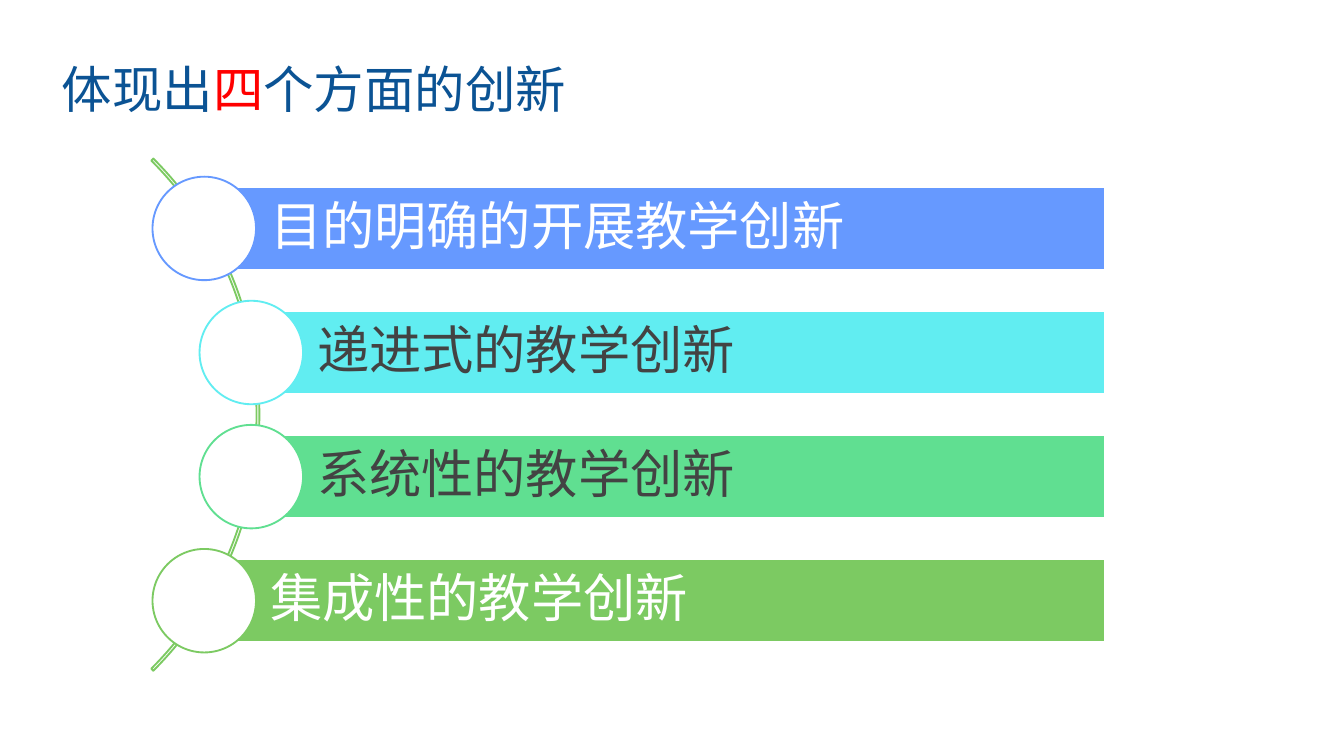
from pptx import Presentation
from pptx.dml.color import RGBColor
from pptx.enum.shapes import MSO_SHAPE
from pptx.enum.text import MSO_ANCHOR, PP_ALIGN
from pptx.util import Inches, Pt

FONT = "Arial"
WHITE, GREY, NAVY, RED = "FFFFFF", "434343", "0B5394", "FF0000"
GREEN = "7CCA62"

# Bars: left edge, fill, text colour, wording
BARS = [
    (1.52, "6699FF", WHITE, "目的明确的开展教学创新"),
    (1.87, "61EDF1", GREY, "递进式的教学创新"),
    (1.87, "60DF91", GREY, "系统性的教学创新"),
    (1.52, GREEN, WHITE, "集成性的教学创新"),
]
BAR_RIGHT, BAR_HEIGHT = 8.22, 0.62
FIRST_TOP, LAST_TOP = 1.39, 4.16
CIRCLE = 0.77


def color(value):
    return RGBColor.from_string(value)


def format_span(span, size, value):
    span.font.name = FONT
    span.font.size = Pt(size)
    span.font.color.rgb = color(value)


def set_frame(frame, left, top, right, bottom):
    frame.margin_left, frame.margin_top = Inches(left), Inches(top)
    frame.margin_right, frame.margin_bottom = Inches(right), Inches(bottom)
    frame.vertical_anchor = MSO_ANCHOR.MIDDLE
    frame.word_wrap = True


def add_shape(page, kind, left, top, width, height, fill, line):
    shape = page.shapes.add_shape(
        kind, Inches(left), Inches(top), Inches(width), Inches(height))
    shape.shadow.inherit = False
    if fill:
        shape.fill.solid()
        shape.fill.fore_color.rgb = color(fill)
    else:
        shape.fill.background()
    shape.line.color.rgb = color(line)
    shape.line.width = Pt(1)
    return shape


def add_title(page, parts):
    title = page.shapes.title
    title.left, title.top = Inches(0.39), Inches(0.37)
    title.width, title.height = Inches(9.12), Inches(0.58)
    set_frame(title.text_frame, 0.07, 0.04, 0.07, 0.04)
    para = title.text_frame.paragraphs[0]
    para.alignment = PP_ALIGN.LEFT
    for text, value in parts:
        span = para.add_run()
        span.text = text
        format_span(span, 27, value)


def add_arc(page):
    arc = add_shape(page, MSO_SHAPE.BLOCK_ARC, -3.46, 0.39, 5.39, 5.39,
                    None, GREEN)
    # Start and end angles (315 and 45 degrees), then band thickness
    for index, value in enumerate((189, 27, 0.004)):
        arc.adjustments[index] = value


def add_bar(page, left, top, fill, text_color, text):
    bar = add_shape(page, MSO_SHAPE.RECTANGLE, left, top,
                    BAR_RIGHT - left, BAR_HEIGHT, fill, WHITE)
    set_frame(bar.text_frame, 0.49, 0.08, 0.08, 0.08)
    para = bar.text_frame.paragraphs[0]
    para.text = text
    para.alignment = PP_ALIGN.LEFT
    para.line_spacing = 0.9
    format_span(para.runs[0], 28, text_color)

    # Circle centred on the left edge of the bar
    add_shape(page, MSO_SHAPE.OVAL, left - CIRCLE / 2,
              top + (BAR_HEIGHT - CIRCLE) / 2, CIRCLE, CIRCLE, WHITE, fill)


def main():
    # Widescreen page, 16 to 9
    deck = Presentation()
    deck.slide_width, deck.slide_height = Inches(10), Inches(10 * 9 / 16)
    page = deck.slides.add_slide(deck.slide_layouts[5])

    # Heading with the number picked out
    add_title(page, [("体现出", NAVY), ("四", RED), ("个方面的创新", NAVY)])

    # Curved list: arc behind, evenly spaced bars in front
    add_arc(page)
    step = (LAST_TOP - FIRST_TOP) / (len(BARS) - 1)
    for index, (left, fill, text_color, text) in enumerate(BARS):
        add_bar(page, left, FIRST_TOP + index * step, fill, text_color, text)

    deck.save("out.pptx")


if __name__ == "__main__":
    main()
